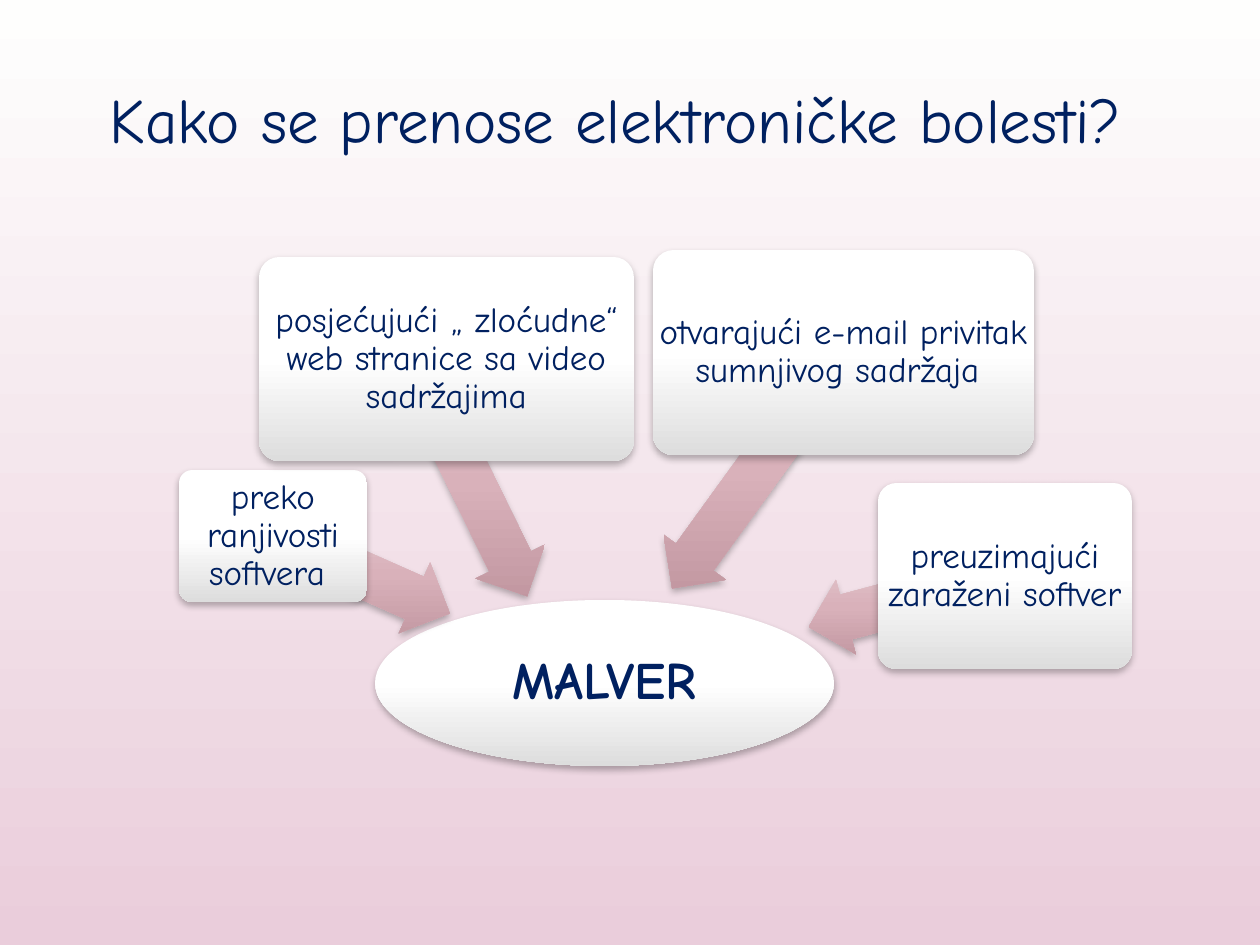
from dataclasses import dataclass

from lxml.etree import SubElement
from pptx import Presentation
from pptx.dml.color import RGBColor
from pptx.enum.shapes import MSO_SHAPE
from pptx.enum.text import MSO_ANCHOR, PP_ALIGN
from pptx.oxml.ns import qn
from pptx.util import Emu, Pt

PX = 914400 / 126


@dataclass(frozen=True)
class Theme:
    font: str = "Comic Neue"
    ink: str = "002060"
    page: tuple = ((0, "FEFEFD"), (100, "EACDDB"))
    card: tuple = ((0, "FFFFFF"), (50, "FFFFFF"), (100, "DDDDDD"))
    arrow: tuple = ((0, "E5CBD1"), (50, "D9B1BA"), (100, "BF949E"))
    title_size: int = 36
    hub_size: int = 30
    body_size: int = 20


def px(*values):
    return [Emu(round(v * PX)) for v in values]


def set_gradient(fill, stops):
    fill.gradient()
    fill.gradient_angle = 270
    grad = fill.gradient_stops[0]._gs.getparent().getparent()
    grad.set("rotWithShape", "0")
    gs_list = grad.find(qn("a:gsLst"))
    for gs in list(gs_list):
        gs_list.remove(gs)
    for pos, color in stops:
        gs = SubElement(gs_list, qn("a:gs"), pos=str(pos * 1000))
        SubElement(gs, qn("a:srgbClr"), val=color)


def add_shadow(sp):
    sp.shadow.inherit = False
    effects = sp._element.spPr.find(qn("a:effectLst"))
    shadow = SubElement(effects, qn("a:outerShdw"), blurRad=str(Pt(4)),
                        dist=str(Pt(2)), dir="5400000", rotWithShape="0")
    color = SubElement(shadow, qn("a:srgbClr"), val="000000")
    SubElement(color, qn("a:alpha"), val="28000")


def write_text(sp, text, *, font, size, color, bold=False,
               align=PP_ALIGN.CENTER, inset=(0, 0)):
    tf = sp.text_frame
    tf.word_wrap = True
    tf.vertical_anchor = MSO_ANCHOR.MIDDLE
    tf.margin_left, tf.margin_top = px(*inset)
    tf.margin_right, tf.margin_bottom = px(*inset)
    p = tf.paragraphs[0]
    p.alignment = align
    p.line_spacing = 0.9
    r = p.add_run()
    r.text = text
    r.font.name = font
    r.font.size = Pt(size)
    r.font.bold = bold
    r.font.color.rgb = RGBColor.from_string(color)


class Deck:
    def __init__(self, theme):
        self.theme = theme
        self.prs = Presentation()
        self.prs.slide_width, self.prs.slide_height = px(1260, 945)
        self.s = None

    def slide(self):
        self.s = self.prs.slides.add_slide(self.prs.slide_layouts[6])
        set_gradient(self.s.background.fill, self.theme.page)

    def text(self, sp, text, size, **fmt):
        write_text(sp, text, font=self.theme.font, size=size,
                   color=self.theme.ink, **fmt)

    def shape(self, kind, box, stops):
        sp = self.s.shapes.add_shape(kind, *px(*box))
        set_gradient(sp.fill, stops)
        sp.line.fill.background()
        add_shadow(sp)
        return sp

    def title(self, text, box):
        sp = self.s.shapes.add_textbox(*px(*box))
        self.text(sp, text, self.theme.title_size,
                  align=PP_ALIGN.LEFT, inset=(13, 6))

    def hub(self, text, box):
        sp = self.shape(MSO_SHAPE.OVAL, box, self.theme.card)
        self.text(sp, text, self.theme.hub_size, bold=True)

    def card(self, text, box):
        sp = self.shape(MSO_SHAPE.ROUNDED_RECTANGLE, box, self.theme.card)
        sp.adjustments[0] = 0.1
        self.text(sp, text, self.theme.body_size)

    def arrow(self, box, rotation):
        sp = self.shape(MSO_SHAPE.LEFT_ARROW, box, self.theme.arrow)
        sp.adjustments[0] = 0.6
        sp.adjustments[1] = 0.5
        sp.rotation = rotation


def main():
    deck = Deck(Theme())
    deck.slide()
    deck.title("Kako se prenose elektroničke bolesti?", (97, 49, 1071, 149))
    deck.hub("MALVER", (375, 600, 459, 166))
    routes = [
        ("preko ranjivosti softvera ",
         (179, 470, 188, 132), (266, 536, 192, 77), 203.9),
        ("posjećujući „ zloćudne“ web stranice sa video sadržajima",
         (259, 257, 375, 204), (345, 444, 253, 77), 243.9),
        ("otvarajući e-mail privitak sumnjivog sadržaja ",
         (653, 250, 381, 205), (612, 432, 291, 77), 305.9),
        ("preuzimajući zaraženi softver",
         (878, 483, 254, 186), (806, 568, 159, 77), 345),
    ]
    for text, card_box, arrow_box, rotation in routes:
        deck.arrow(arrow_box, rotation)
        deck.card(text, card_box)
    deck.prs.save("out.pptx")


if __name__ == "__main__":
    main()
